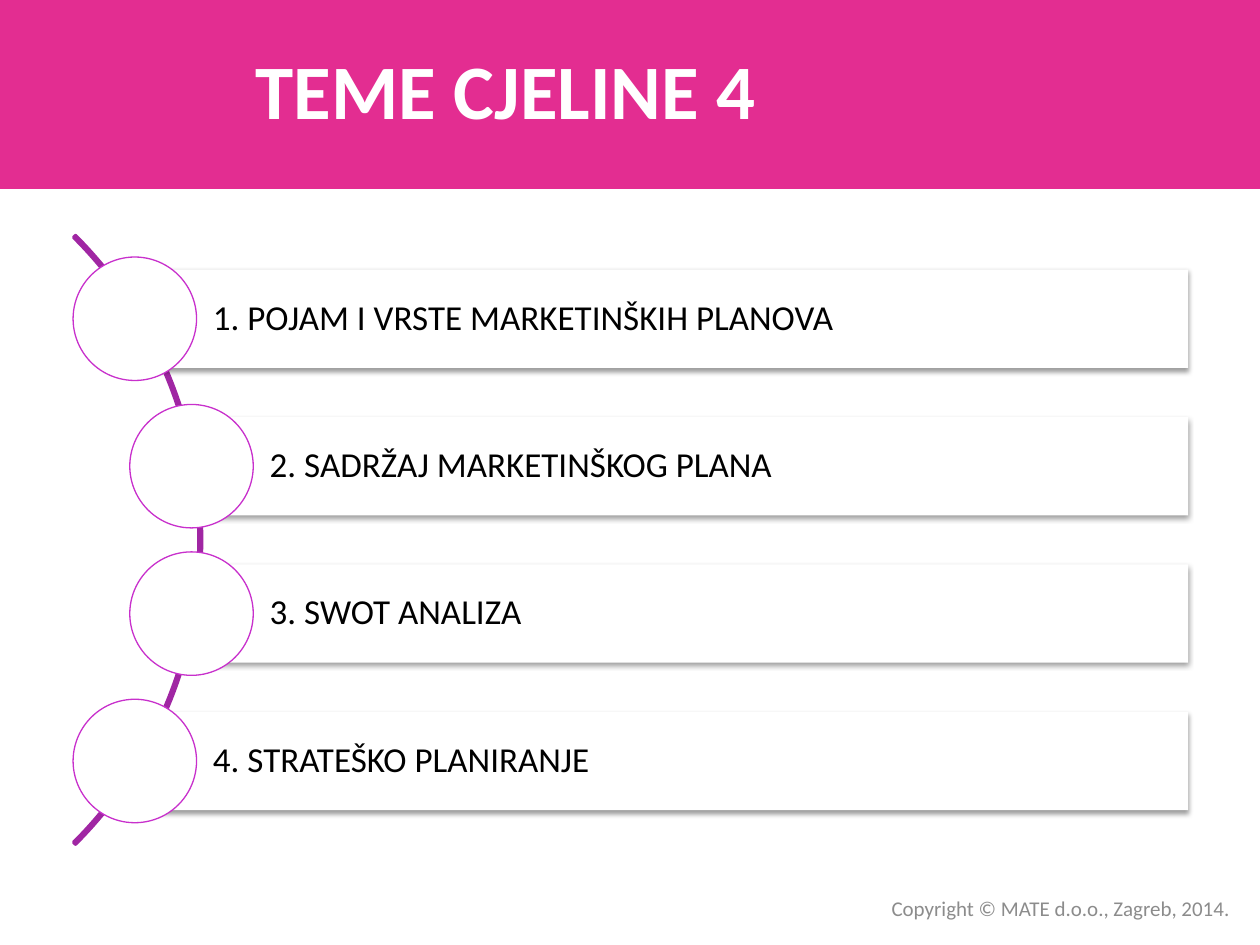
import pptx
import pptx.dml.color
import pptx.enum.shapes
import pptx.enum.text
import pptx.oxml
import pptx.oxml.ns
import pptx.util

Inches = pptx.util.Inches
Pt = pptx.util.Pt
Shape = pptx.enum.shapes.MSO_SHAPE
Align = pptx.enum.text.PP_ALIGN


def colour(hex_string):
    return pptx.dml.color.RGBColor.from_string(hex_string)


class TopicSlide:
    font = "Calibri"
    banner_pink = "E32D91"
    arc_purple = "A026A3"
    ring_purple = "C830CC"
    white = "FFFFFF"
    black = "000000"
    grey = "8C8C8C"

    def __init__(self, slide):
        self.slide = slide

    def shape(self, kind, box, fill=None, line=None, width=0.75):
        item = self.slide.shapes.add_shape(kind, *map(Inches, box))
        item.shadow.inherit = False
        if fill:
            item.fill.solid()
            item.fill.fore_color.rgb = colour(fill)
        else:
            item.fill.background()
        if line:
            item.line.color.rgb = colour(line)
            item.line.width = Pt(width)
        else:
            item.line.fill.background()
        return item

    def set_text(self, holder, text, size, ink, align, bold=False, margins=(0.1, 0.05, 0.1, 0.05)):
        frame = holder.text_frame
        frame.word_wrap = True
        frame.vertical_anchor = pptx.enum.text.MSO_ANCHOR.MIDDLE
        frame.margin_left, frame.margin_top, frame.margin_right, frame.margin_bottom = map(Inches, margins)
        frame.text = text
        paragraph = frame.paragraphs[0]
        paragraph.alignment = align
        font = paragraph.runs[0].font
        font.name = self.font
        font.size = Pt(size)
        font.bold = bold
        font.color.rgb = colour(ink)
        return paragraph

    def label(self, box, text, size, ink, align, bold=False):
        holder = self.slide.shapes.add_textbox(*map(Inches, box))
        self.set_text(holder, text, size, ink, align, bold)

    def arc(self, box):
        arc = self.shape(Shape.BLOCK_ARC, box, line=self.arc_purple, width=2)
        for index, value in enumerate((189, 27, 0.003)):
            arc.adjustments[index] = value

    def bar(self, box, text):
        bar = self.shape(Shape.RECTANGLE, box, fill=self.white)
        effects = bar._element.spPr.find(pptx.oxml.ns.qn("a:effectLst"))
        effects.append(pptx.oxml.parse_xml(
            f'<a:outerShdw {pptx.oxml.ns.nsdecls("a")} blurRad="{Pt(3.1)}" dist="{Pt(1.6)}" '
            f'dir="5400000" rotWithShape="0"><a:srgbClr val="{self.black}">'
            '<a:alpha val="38000"/></a:srgbClr></a:outerShdw>'))
        paragraph = self.set_text(bar, text, 20, self.black, Align.LEFT, margins=(0.62, 0.06, 0.06, 0.06))
        paragraph.line_spacing = 0.9

    def topic(self, text, bar_left, top):
        right, height, diameter = 9.43, 0.78, 0.98
        self.bar((bar_left, top, right - bar_left, height), text)
        ring_box = (bar_left - diameter / 2, top - (diameter - height) / 2, diameter, diameter)
        self.shape(Shape.OVAL, ring_box, fill=self.white, line=self.ring_purple)


def main():
    deck = pptx.Presentation()
    deck.slide_width = Inches(10)
    deck.slide_height = Inches(7.5)
    page = TopicSlide(deck.slides.add_slide(deck.slide_layouts[6]))

    page.shape(Shape.RECTANGLE, (0, 0, 10, 1.5), fill=page.banner_pink)
    page.label((0, 0.08, 8.17, 1.25), "TEME CJELINE 4 ", 44, page.white, Align.CENTER, bold=True)

    page.arc((-5.23, 0.87, 6.83, 6.83))
    topics = (
        ("1. POJAM I VRSTE MARKETINŠKIH PLANOVA", 1.07),
        ("2. SADRŽAJ MARKETINŠKOG PLANA", 1.52),
        ("3. SWOT ANALIZA", 1.52),
        ("4. STRATEŠKO PLANIRANJE", 1.07),
    )
    for row, (text, bar_left) in enumerate(topics):
        page.topic(text, bar_left, 2.14 + 1.17 * row)

    page.label((4.69, 7.06, 5.17, 0.3), "Copyright © MATE d.o.o., Zagreb, 2014.", 12, page.grey, Align.RIGHT)
    deck.save("out.pptx")


if __name__ == "__main__":
    main()
